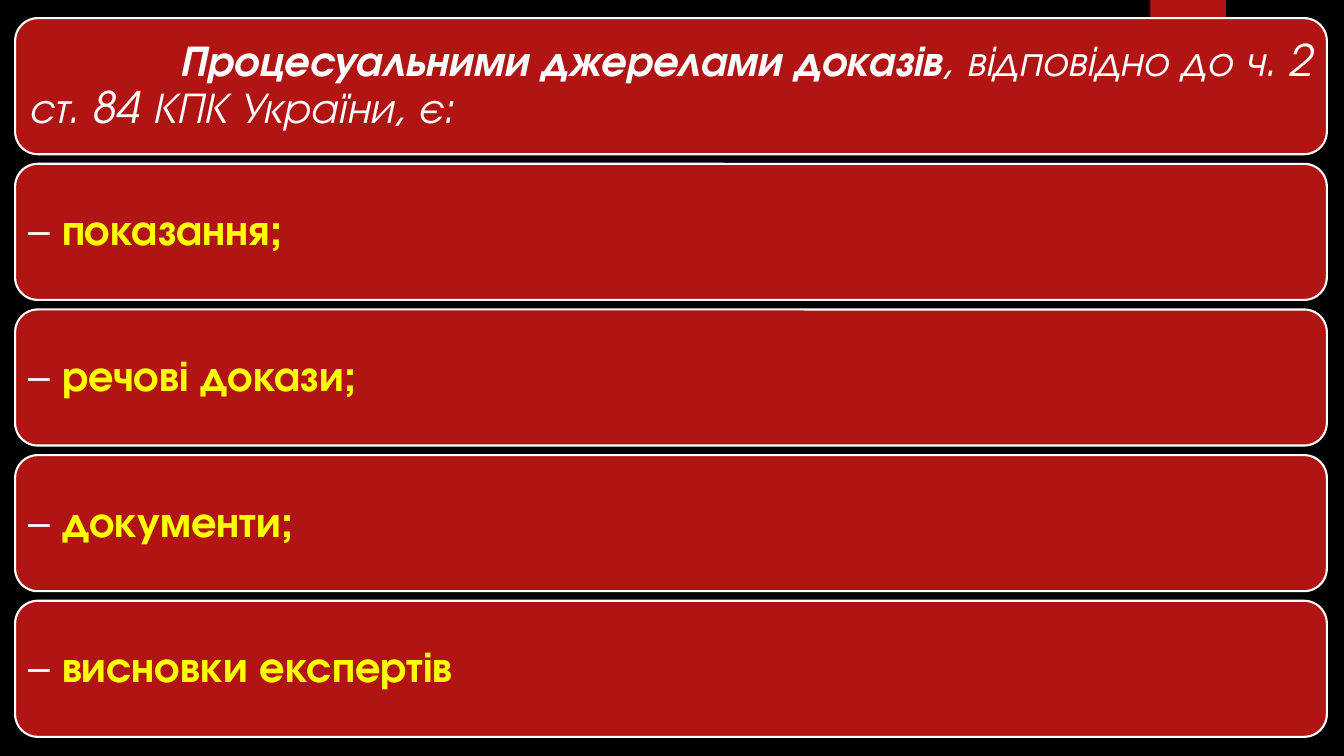
from lxml import etree
from pptx import Presentation
from pptx.dml.color import RGBColor
from pptx.enum.shapes import MSO_SHAPE
from pptx.enum.text import MSO_ANCHOR, PP_ALIGN
from pptx.oxml.ns import qn
from pptx.util import Inches, Pt

RECTANGLE = MSO_SHAPE.RECTANGLE
ROUNDED = MSO_SHAPE.ROUNDED_RECTANGLE
MIDDLE = MSO_ANCHOR.MIDDLE
LEFT, JUSTIFY = PP_ALIGN.LEFT, PP_ALIGN.JUSTIFY

FONT = "TeX Gyre Adventor"
COLORS = {"black": "000000", "red": "B01513", "white": "FFFFFF", "yellow": "FFFF00"}

CARD_LEFT, CARD_TOP = 0.15, 0.18
CARD_WIDTH, CARD_HEIGHT = 13.01, 1.35
CARD_STEP = 1.445
CARD_INSET = 0.065
HEADING_TAB = 1.5

HEADING = [
    ("\tПроцесуальними джерелами доказів", "white", True, True),
    (", відповідно до ч. 2 ст. 84 КПК України, є:", "white", False, True),
]
SOURCES = ["показання;", "речові докази;", "документи;", "висновки експертів"]


def color(name):
    return RGBColor.from_string(COLORS[name])


def add_red_shape(kind, left, top, width, height):
    shape = slide.shapes.add_shape(
        kind, Inches(left), Inches(top), Inches(width), Inches(height))
    shape.shadow.inherit = False
    shape.fill.solid()
    shape.fill.fore_color.rgb = color("red")
    shape.line.fill.background()
    return shape


presentation = Presentation()
presentation.slide_width = Inches(13.33)
presentation.slide_height = Inches(7.5)
slide = presentation.slides.add_slide(presentation.slide_layouts[6])

# Background and bookmark at the top edge
slide.background.fill.solid()
slide.background.fill.fore_color.rgb = color("black")
add_red_shape(RECTANGLE, 11.41, 0, 0.75, 1.25)

# Cards: the heading, then one per source of evidence
cards = [HEADING]
for source in SOURCES:
    cards.append([("– ", "white", False, False), (source, "yellow", True, False)])

for index, runs in enumerate(cards):
    card = add_red_shape(
        ROUNDED, CARD_LEFT, CARD_TOP + index * CARD_STEP, CARD_WIDTH, CARD_HEIGHT)
    card.line.color.rgb = color("white")
    card.line.width = Pt(1.5)

    frame = card.text_frame
    frame.word_wrap = True
    frame.vertical_anchor = MIDDLE
    frame.margin_left = frame.margin_right = Inches(CARD_INSET)
    frame.margin_top = frame.margin_bottom = Inches(CARD_INSET)

    paragraph = frame.paragraphs[0]
    paragraph.alignment = JUSTIFY if runs is HEADING else LEFT
    paragraph.line_spacing = 0.9
    if runs is HEADING:
        properties = paragraph._p.get_or_add_pPr()
        tabs = etree.SubElement(properties, qn("a:tabLst"))
        etree.SubElement(tabs, qn("a:tab"), pos=str(Inches(HEADING_TAB)), algn="l")

    for text, color_name, bold, italic in runs:
        run = paragraph.add_run()
        run.text = text
        run.font.name = FONT
        run.font.size = Pt(31)
        run.font.bold = bold
        run.font.italic = italic
        run.font.color.rgb = color(color_name)

presentation.save("out.pptx")
